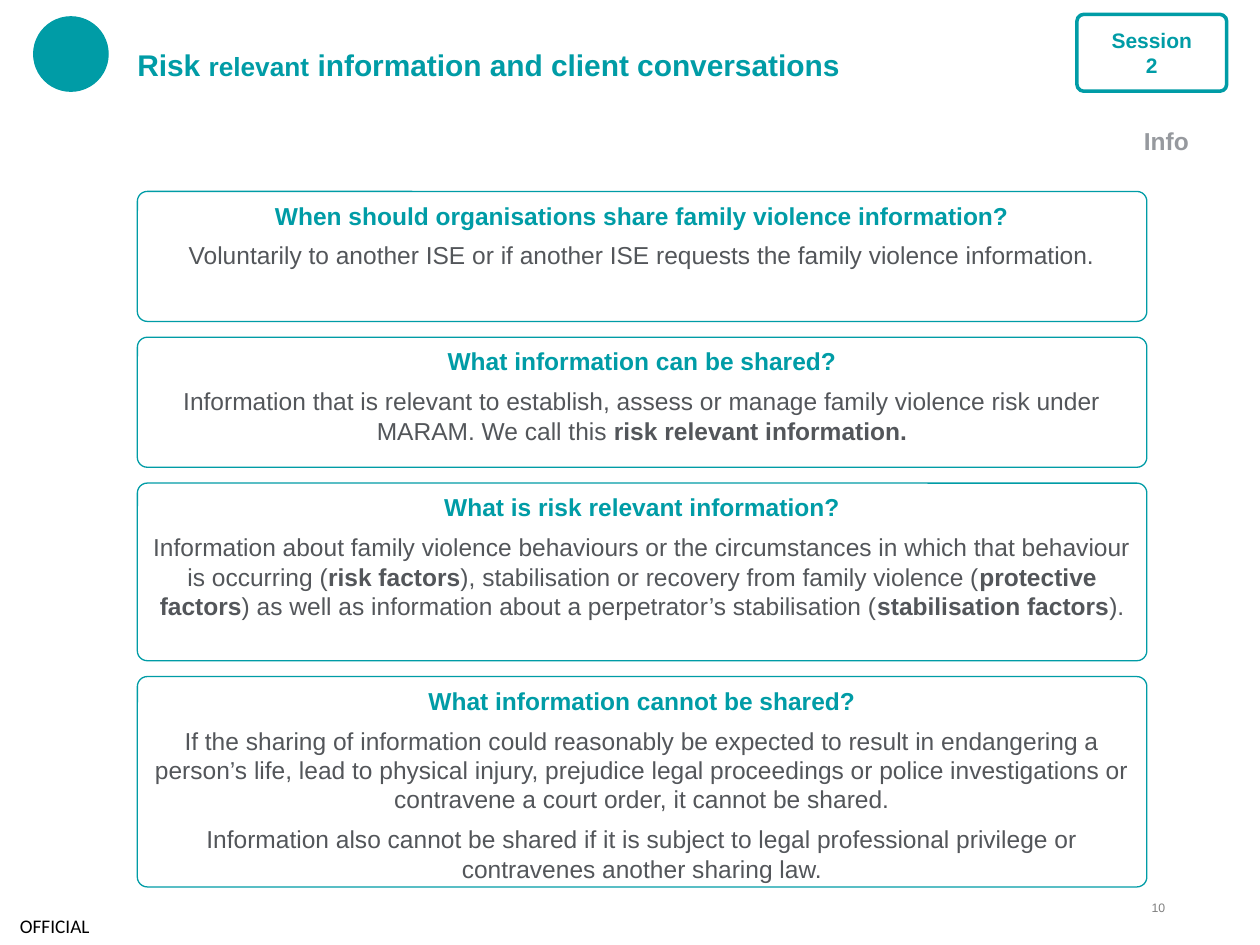
from pptx import Presentation
from pptx.dml.color import RGBColor
from pptx.enum.shapes import MSO_SHAPE
from pptx.enum.text import MSO_ANCHOR, PP_ALIGN
from pptx.util import Cm, Pt

CENTER, LEFT, RIGHT = PP_ALIGN.CENTER, PP_ALIGN.LEFT, PP_ALIGN.RIGHT
TOP, MIDDLE = MSO_ANCHOR.TOP, MSO_ANCHOR.MIDDLE
ROUNDED, OVAL = MSO_SHAPE.ROUNDED_RECTANGLE, MSO_SHAPE.OVAL
TEAL, BODY_GREY = "009CA6", "53565A"


def rgb(value):
    return RGBColor.from_string(value)


def style(paragraph, size, color, bold=False, align=LEFT, font="Arial"):
    paragraph.alignment = align
    paragraph.font.name = font
    paragraph.font.size = Pt(size)
    paragraph.font.bold = bold
    paragraph.font.color.rgb = rgb(color)


prs = Presentation()
prs.slide_width, prs.slide_height = Cm(25.4), Cm(19.05)
slide = prs.slides.add_slide(prs.slide_layouts[6])
shapes = slide.shapes

# Single-line labels: text, left, top, width, height, inset, anchor, style
labels = [
    ("OFFICIAL", 0, 18.26, 2.21, 0.79, 0, MIDDLE,
     dict(size=11, color="000000", align=CENTER, font="Calibri")),
    ("Info", 22.81, 2.41, 10.82, 0.86, 0.25, TOP,
     dict(size=14, color="96999E", bold=True)),
    ("10", 22.63, 18.14, 0.86, 0.51, 0, TOP,
     dict(size=7, color="7F7F7F", align=RIGHT)),
]
for text, left, top, width, height, inset, anchor, look in labels:
    frame = shapes.add_textbox(Cm(left), Cm(top), Cm(width), Cm(height)).text_frame
    frame.word_wrap = True
    frame.vertical_anchor = anchor
    frame.margin_left = frame.margin_right = Cm(inset)
    frame.margin_top = frame.margin_bottom = Cm(inset / 2)
    frame.text = text
    style(frame.paragraphs[0], **look)

# Title with its marker
marker = shapes.add_shape(OVAL, Cm(0.68), Cm(0.34), Cm(1.5), Cm(1.5))
marker.shadow.inherit = False
marker.fill.solid()
marker.fill.fore_color.rgb = rgb(TEAL)
marker.line.color.rgb = rgb(TEAL)
marker.line.width = Pt(0.75)

title = shapes.add_textbox(Cm(2.77), Cm(0.48), Cm(17.42), Cm(1.65)).text_frame
title.word_wrap = True
title.vertical_anchor = MIDDLE
title.margin_left = title.margin_right = title.margin_top = title.margin_bottom = 0
title_line = title.paragraphs[0]
style(title_line, 17.1, TEAL, bold=True)
title_line.space_after = Pt(3.4)
for text, size in [("Risk ", 17.1), ("relevant", 15),
                   (" information and client conversations", 17.1)]:
    run = title_line.add_run()
    run.text = text
    run.font.size = Pt(size)

# Session badge
badge = shapes.add_shape(ROUNDED, Cm(21.71), Cm(0.29), Cm(3.02), Cm(1.55))
badge.adjustments[0] = 0.09
badge.shadow.inherit = False
badge.fill.solid()
badge.fill.fore_color.rgb = rgb("FFFFFF")
badge.line.color.rgb = rgb(TEAL)
badge.line.width = Pt(2)
badge_text = badge.text_frame
badge_text.margin_left = badge_text.margin_right = Cm(0.51)
badge_text.text = "Session 2"
style(badge_text.paragraphs[0], 12, TEAL, bold=True, align=CENTER)
badge_text.paragraphs[0].space_after = Pt(6)

# Question boxes: height, question, answer paragraphs as (text, bold) runs
questions = [
    (2.62, "When should organisations share family violence information?",
     [[("Voluntarily to another ISE or if another ISE requests the family violence information.", False)]]),
    (2.62, "What information can be shared?",
     [[("Information that is relevant to establish, assess or manage family violence risk "
        "under MARAM. We call this ", False),
       ("risk relevant information.", True)]]),
    (3.58, "What is risk relevant information?",
     [[("Information about family violence behaviours or the circumstances in which that "
        "behaviour is occurring (", False),
       ("risk factors", True),
       ("), stabilisation or recovery from family violence (", False),
       ("protective factors", True),
       (") as well as information about a perpetrator’s stabilisation (", False),
       ("stabilisation factors", True),
       (").", False)]]),
    (4.24, "What information cannot be shared?",
     [[("If the sharing of information could reasonably be expected to result in endangering "
        "a person’s life, lead to physical injury, prejudice legal proceedings or police "
        "investigations or contravene a court order, it cannot be shared.", False)],
      [("Information also cannot be shared if it is subject to legal professional privilege "
        "or contravenes another sharing law.", False)]]),
]
BOX_GAP, CORNER_RADIUS = 0.32, 0.2
box_top = 3.86
for height, question, answers in questions:
    box = shapes.add_shape(ROUNDED, Cm(2.77), Cm(box_top), Cm(20.35), Cm(height))
    box.adjustments[0] = CORNER_RADIUS / height
    box.shadow.inherit = False
    box.fill.background()
    box.line.color.rgb = rgb(TEAL)
    box.line.width = Pt(0.75)
    frame = box.text_frame
    frame.vertical_anchor = TOP
    frame.text = question
    style(frame.paragraphs[0], 14, TEAL, bold=True, align=CENTER)
    for answer in answers:
        paragraph = frame.add_paragraph()
        style(paragraph, 14, BODY_GREY, align=CENTER)
        for text, bold in answer:
            run = paragraph.add_run()
            run.text = text
            run.font.bold = bold
    for paragraph in frame.paragraphs:
        paragraph.space_after = Pt(6)
    box_top += height + BOX_GAP

prs.save("out.pptx")
